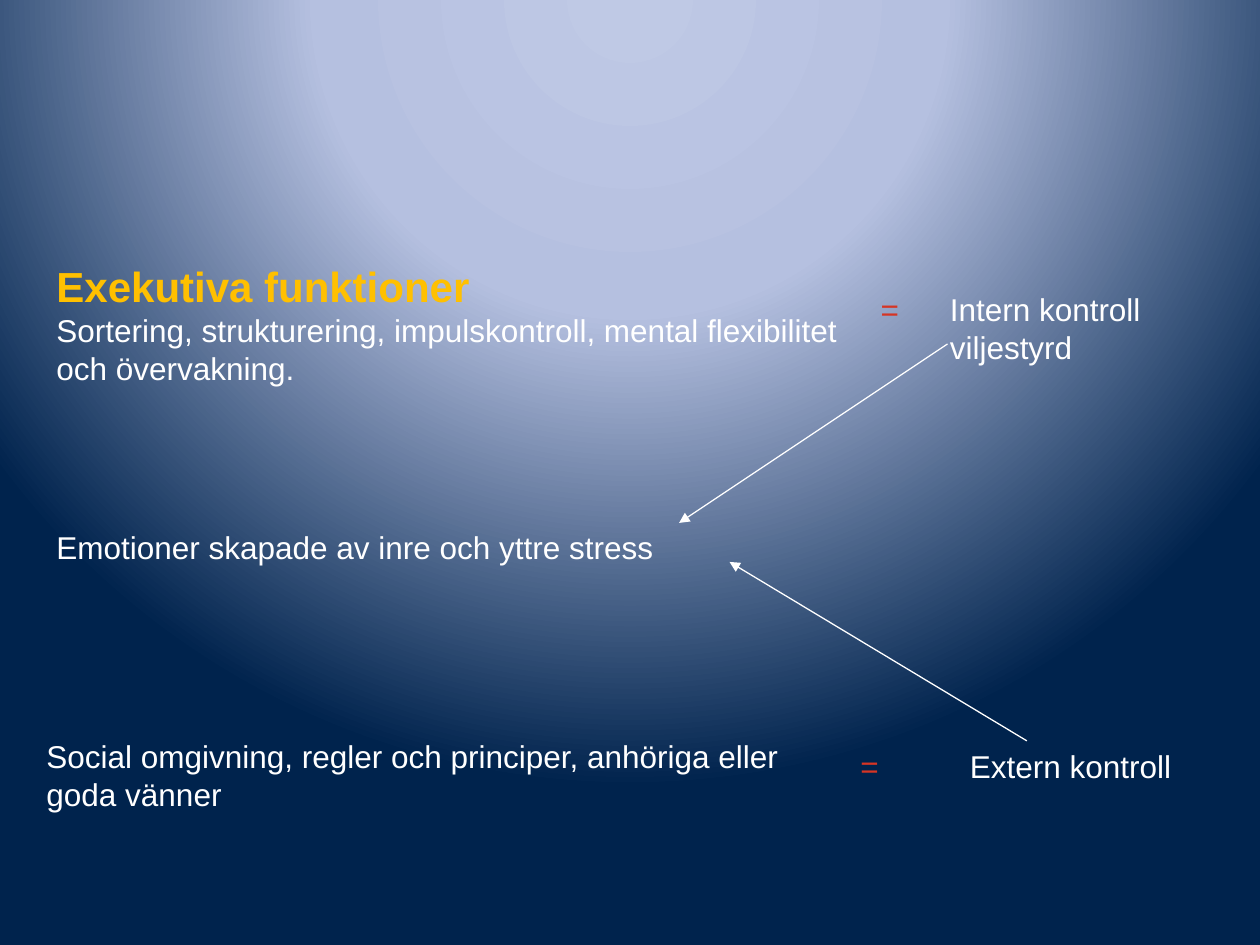
from lxml import etree
from pptx import Presentation
from pptx.dml.color import RGBColor
from pptx.enum.shapes import MSO_CONNECTOR
from pptx.enum.text import MSO_AUTO_SIZE
from pptx.oxml.ns import qn
from pptx.util import Inches, Pt

STRAIGHT = MSO_CONNECTOR.STRAIGHT
FIT_SHAPE = MSO_AUTO_SIZE.SHAPE_TO_FIT_TEXT
BLANK_LAYOUT = 6

THEME = {
    "heading": {"name": "Arial", "size": Pt(24), "bold": True, "color": "FFC000"},
    "body": {"name": "Arial", "size": Pt(18), "bold": False, "color": "FFFFFF"},
    "equals": {"name": "Arial", "size": Pt(18), "bold": False, "color": "D63524"},
    "arrow": {"color": "FFFFFF", "width": Pt(0.75)},
    "glow": [(0, "BFC9E5"), (40, "B5C0E0"), (100, "00234D")],
    "glow_centre": {"l": 50, "t": -80, "r": 50, "b": 180},
}

# (left, top, width, height), [(style, line), ...]
STATEMENTS = [
    ((0.35, 2.02, 6.46, 1.11), [
        ("heading", "Exekutiva funktioner"),
        ("body", "Sortering, strukturering, impulskontroll, mental flexibilitet"),
        ("body", "och övervakning."),
    ]),
    ((6.89, 2.25, 0.35, 0.4), [("equals", "=")]),
    ((7.44, 2.25, 1.73, 0.71), [("body", "Intern kontroll"), ("body", "viljestyrd")]),
    ((0.35, 4.14, 4.94, 0.4), [("body", "Emotioner skapade av inre och yttre stress")]),
    ((0.27, 5.8, 6.09, 0.7), [
        ("body", "Social omgivning, regler och principer, anhöriga eller"),
        ("body", "goda vänner"),
    ]),
    ((6.73, 5.88, 0.35, 0.4), [("equals", "=")]),
    ((7.6, 5.88, 1.8, 0.4), [("body", "Extern kontroll")]),
]

# Both kinds of control point at the emotions: (from, to)
INFLUENCES = [
    ((7.52, 2.73), (5.39, 4.15)),
    ((8.15, 5.88), (5.79, 4.46)),
]


def paint_glow(slide):
    """Fill the background with a circular gradient centred above the slide."""
    slide.background.fill.gradient()
    gradient = next(slide.element.iter(qn("a:gradFill")))
    for child in list(gradient):
        gradient.remove(child)
    stops = etree.SubElement(gradient, qn("a:gsLst"))
    for percent, color in THEME["glow"]:
        stop = etree.SubElement(stops, qn("a:gs"), pos=str(percent * 1000))
        etree.SubElement(stop, qn("a:srgbClr"), val=color)
    circle = etree.SubElement(gradient, qn("a:path"), path="circle")
    centre = {side: str(percent * 1000) for side, percent in THEME["glow_centre"].items()}
    etree.SubElement(circle, qn("a:fillToRect"), centre)


def style_font(font, style):
    for attribute, value in THEME[style].items():
        if attribute == "color":
            font.color.rgb = RGBColor.from_string(value)
        else:
            setattr(font, attribute, value)


def add_statement(slide, box, lines):
    frame = slide.shapes.add_textbox(*map(Inches, box)).text_frame
    frame.word_wrap = False
    frame.auto_size = FIT_SHAPE
    for index, (style, line) in enumerate(lines):
        paragraph = frame.add_paragraph() if index else frame.paragraphs[0]
        run = paragraph.add_run()
        run.text = line
        style_font(run.font, style)


def add_arrow(slide, start, end):
    arrow = slide.shapes.add_connector(STRAIGHT, *map(Inches, start + end))
    arrow.line.color.rgb = RGBColor.from_string(THEME["arrow"]["color"])
    arrow.line.width = THEME["arrow"]["width"]
    properties = arrow.element.spPr
    etree.SubElement(properties.find(qn("a:ln")), qn("a:tailEnd"), type="triangle")
    etree.SubElement(properties, qn("a:effectLst"))


def main():
    deck = Presentation()
    deck.slide_width, deck.slide_height = Inches(10), Inches(7.5)
    slide = deck.slides.add_slide(deck.slide_layouts[BLANK_LAYOUT])
    paint_glow(slide)
    for box, lines in STATEMENTS:
        add_statement(slide, box, lines)
    for start, end in INFLUENCES:
        add_arrow(slide, start, end)
    deck.save("out.pptx")


if __name__ == "__main__":
    main()
